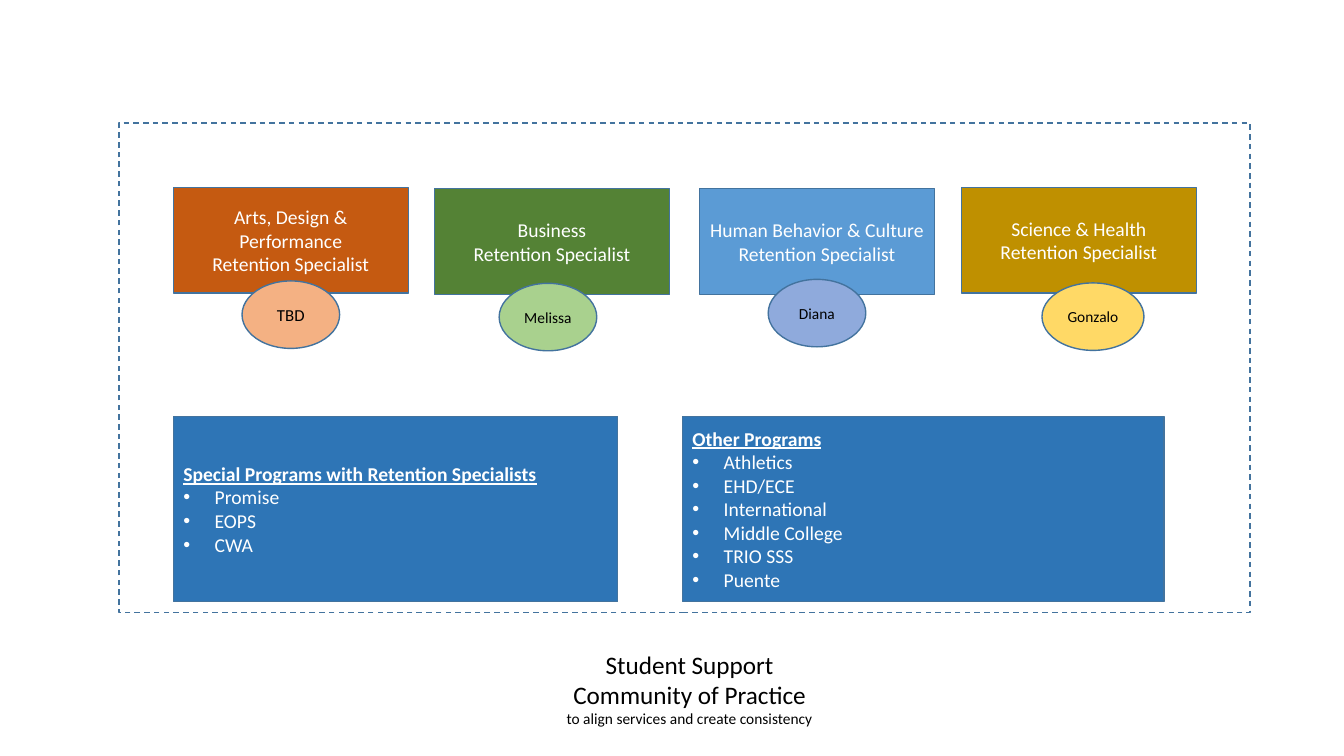
from dataclasses import dataclass

from lxml import etree
from pptx import Presentation
from pptx.dml.color import RGBColor
from pptx.enum.dml import MSO_LINE
from pptx.enum.shapes import MSO_SHAPE
from pptx.enum.text import MSO_ANCHOR, MSO_AUTO_SIZE, PP_ALIGN
from pptx.oxml.ns import qn
from pptx.util import Cm, Pt

RECT, OVAL = MSO_SHAPE.RECTANGLE, MSO_SHAPE.OVAL
DASH, MIDDLE = MSO_LINE.DASH, MSO_ANCHOR.MIDDLE
LEFT, CENTER = PP_ALIGN.LEFT, PP_ALIGN.CENTER
GROW = MSO_AUTO_SIZE.SHAPE_TO_FIT_TEXT


@dataclass(frozen=True)
class Theme:
    font: str = "Calibri"
    light: str = "FFFFFF"
    dark: str = "000000"
    edge: str = "43739E"
    panel: str = "2E75B6"
    title: int = 18
    body: int = 14
    name: int = 12
    small: int = 11


THEME = Theme()
CARD_W, CARD_H = 5.92, 2.67
OVAL_H = 1.7

# left, top, fill, unit, then the oval: dx, dy, width, fill, name, size
CARDS = [
    (4.37, 4.72, "C55A11", "Arts, Design & Performance",
     (1.73, 2.36, 2.46, "F4B183", "TBD", THEME.name)),
    (10.95, 4.75, "548235", "Business",
     (1.63, 2.39, 2.46, "A9D18E", "Melissa", THEME.small)),
    (17.63, 4.75, "5B9BD5", "Human Behavior & Culture",
     (1.73, 2.29, 2.46, "8FAADC", "Diana", THEME.small)),
    (24.23, 4.72, "BF9000", "Science & Health",
     (2.03, 2.41, 2.57, "FFD966", "Gonzalo", THEME.small)),
]
PANELS = [
    ((4.37, 10.49, 11.2, 4.67), "Special Programs with Retention Specialists",
     ["Promise", "EOPS", "CWA"]),
    ((17.2, 10.49, 12.14, 4.67), "Other Programs",
     ["Athletics", "EHD/ECE", "International", "Middle College", "TRIO SSS",
      "Puente"]),
]


def add_box(slide, kind, box, fill=None):
    """Add an outlined shape; no fill leaves it see-through."""
    shape = slide.shapes.add_shape(kind, *map(Cm, box))
    shape.shadow.inherit = False
    shape.line.color.rgb = RGBColor.from_string(THEME.edge)
    shape.line.width = Pt(1)
    if fill:
        shape.fill.solid()
        shape.fill.fore_color.rgb = RGBColor.from_string(fill)
    else:
        shape.fill.background()
    shape.text_frame.vertical_anchor = MIDDLE
    return shape


def add_line(frame, first, text, size, color, align=CENTER, **style):
    """Write one paragraph, the first into the one already there."""
    para = frame.paragraphs[0] if first else frame.add_paragraph()
    para.alignment = align
    run = para.add_run()
    run.text = text
    form = {"name": THEME.font, "size": Pt(size), **style}
    for key, value in form.items():
        setattr(run.font, key, value)
    run.font.color.rgb = RGBColor.from_string(color)
    return para


def add_bullet(para):
    props = para._p.get_or_add_pPr()
    props.set("marL", str(Cm(0.79)))
    props.set("indent", str(-Cm(0.79)))
    font = etree.SubElement(props, qn("a:buFont"))
    font.set("typeface", "Arial")
    mark = etree.SubElement(props, qn("a:buChar"))
    mark.set("char", "•")


def draw_card(slide, box, fill, unit):
    frame = add_box(slide, RECT, box, fill).text_frame
    for i, text in enumerate([unit, "Retention Specialist"]):
        add_line(frame, i == 0, text, THEME.body, THEME.light)


def draw_badge(slide, box, fill, name, size):
    frame = add_box(slide, OVAL, box, fill).text_frame
    add_line(frame, True, name, size, THEME.dark)


def draw_panel(slide, box, head, items):
    frame = add_box(slide, RECT, box, THEME.panel).text_frame
    add_line(frame, True, head, THEME.body, THEME.light, LEFT,
             bold=True, underline=True)
    for item in items:
        add_bullet(add_line(frame, False, item, THEME.body, THEME.light, LEFT))


def draw_caption(slide, box):
    frame = slide.shapes.add_textbox(*map(Cm, box)).text_frame
    frame.word_wrap = False
    frame.auto_size = GROW
    lines = [("Student Support", THEME.title),
             ("Community of Practice", THEME.title),
             ("to align services and create consistency", THEME.small)]
    for i, (text, size) in enumerate(lines):
        add_line(frame, i == 0, text, size, THEME.dark)


def main():
    deck = Presentation()
    deck.slide_width, deck.slide_height = Cm(33.87), Cm(19.05)
    slide = deck.slides.add_slide(deck.slide_layouts[6])
    border = add_box(slide, RECT, (3, 3.1, 28.5, 12.34))
    border.line.dash_style = DASH
    for left, top, fill, unit, (dx, dy, width, *badge) in CARDS:
        draw_card(slide, (left, top, CARD_W, CARD_H), fill, unit)
        draw_badge(slide, (left + dx, top + dy, width, OVAL_H), *badge)
    for panel in PANELS:
        draw_panel(slide, *panel)
    draw_caption(slide, (14, 16.23, 6.76, 2.26))
    deck.save("out.pptx")


if __name__ == "__main__":
    main()
